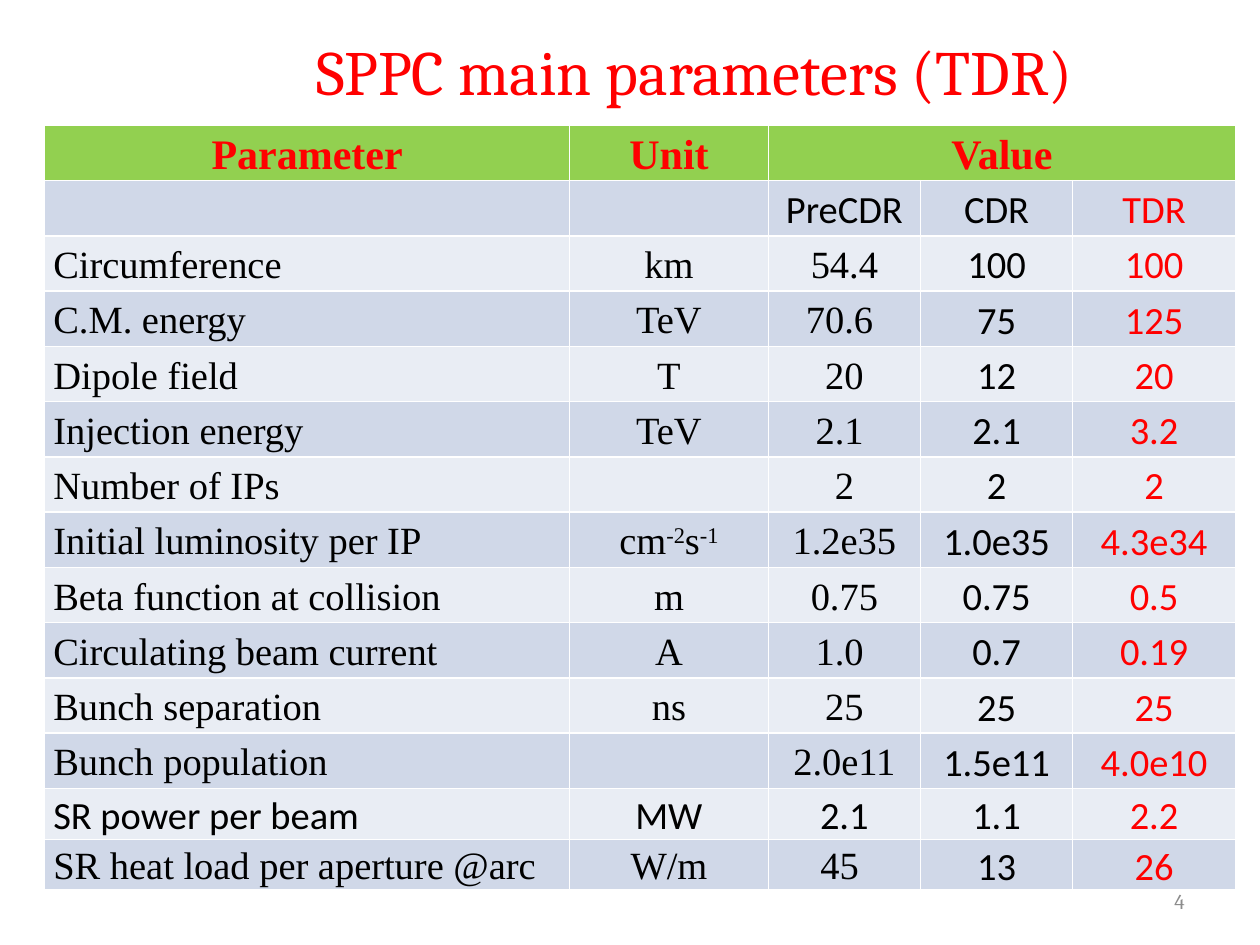
from pptx import Presentation
from pptx.dml.color import RGBColor
from pptx.enum.text import MSO_ANCHOR, MSO_AUTO_SIZE, PP_ALIGN
from pptx.util import Pt

LEFT, CENTER, RIGHT = PP_ALIGN.LEFT, PP_ALIGN.CENTER, PP_ALIGN.RIGHT
TOP, MIDDLE = MSO_ANCHOR.TOP, MSO_ANCHOR.MIDDLE
GROW = MSO_AUTO_SIZE.SHAPE_TO_FIT_TEXT

RED = RGBColor(0xFF, 0x00, 0x00)
BLACK = RGBColor(0x00, 0x00, 0x00)
GRAY = RGBColor(0x8C, 0x8C, 0x8C)
GREEN = RGBColor(0x92, 0xD0, 0x50)
BAND_DARK = RGBColor(0xD0, 0xD8, 0xE8)
BAND_LIGHT = RGBColor(0xE9, 0xED, 0xF4)

SERIF, SANS, HEADING = "Times New Roman", "Calibri", "Cambria"

COLUMN_WIDTHS = [300, 113.5, 87, 87, 93]
ROW_HEIGHT, LAST_ROW_HEIGHT = 31.6, 29
LAST_ROWS = 2
TDR_COLUMN = 4

# Superscripts stand between ^ marks
ROWS = [
    ("Parameter", "Unit", "Value", "", ""),
    ("", "", "PreCDR", "CDR", "TDR"),
    ("Circumference", "km", "54.4", "100", "100"),
    ("C.M. energy", "TeV", "70.6 ", "75", "125"),
    ("Dipole field", "T", "20", "12", "20"),
    ("Injection energy", "TeV", "2.1 ", "2.1", "3.2"),
    ("Number of IPs", "", "2", "2", "2"),
    ("Initial luminosity per IP", "cm^-2^s^-1^", "1.2e35", "1.0e35", "4.3e34"),
    ("Beta function at collision", "m", "0.75", "0.75", "0.5"),
    ("Circulating beam current", "A", "1.0 ", "0.7", "0.19"),
    ("Bunch separation", "ns", "25", "25", "25"),
    ("Bunch population", "", "2.0e11", "1.5e11", "4.0e10"),
    ("SR power per beam", "MW", "2.1", "1.1", "2.2"),
    ("SR heat load per aperture @arc", "W/m", "45 ", "13", "26"),
]
SANS_ROWS = ("PreCDR", "SR power per beam")


def style_font(font, name, size, color, bold=False):
    font.name, font.size, font.bold = name, Pt(size), bold
    font.color.rgb = color


def fill_box(box, text, size, color, align, anchor):
    frame = box.text_frame
    frame.text = text
    frame.word_wrap = True
    frame.vertical_anchor = anchor
    para = frame.paragraphs[0]
    para.alignment = align
    style_font(para.runs[0].font, HEADING, size, color)


def add_title(page):
    title = page.shapes.title
    title.left, title.top, title.width, title.height = Pt(105), Pt(15), Pt(584), Pt(51)
    fill_box(title, "SPPC main parameters (TDR)", 36, RED, CENTER, TOP)
    title.text_frame.auto_size = GROW


def add_page_number(page):
    box = page.shapes.add_textbox(Pt(516), Pt(500.5), Pt(168), Pt(29))
    fill_box(box, "4", 12, GRAY, RIGHT, MIDDLE)


def fill_cell(cell, text, fill, align, name, size, color, bold):
    cell.fill.solid()
    cell.fill.fore_color.rgb = fill
    cell.vertical_anchor = MIDDLE
    cell.margin_left = cell.margin_right = Pt(5)
    cell.margin_top = cell.margin_bottom = Pt(0)
    para = cell.text_frame.paragraphs[0]
    para.alignment = align
    para.line_spacing = 1.1
    for index, part in enumerate(text.split("^")):
        if part:
            span = para.add_run()
            span.text = part
            style_font(span.font, name, size, color, bold)
            if index % 2:
                span.font._element.set("baseline", "30000")


def add_parameter_table(page):
    last_start = len(ROWS) - LAST_ROWS
    heights = [ROW_HEIGHT] * last_start + [LAST_ROW_HEIGHT] * LAST_ROWS
    table = page.shapes.add_table(
        len(ROWS), len(COLUMN_WIDTHS), Pt(25.5), Pt(71.5),
        Pt(sum(COLUMN_WIDTHS)), Pt(sum(heights))).table
    for column, width in zip(table.columns, COLUMN_WIDTHS):
        column.width = Pt(width)
    for row, height in zip(table.rows, heights):
        row.height = Pt(height)

    for r, values in enumerate(ROWS):
        sans_row = any(label in values for label in SANS_ROWS)
        for c, text in enumerate(values):
            cell = table.cell(r, c)
            if r == 0:
                fill_cell(cell, text, GREEN, CENTER, SERIF, 24, RED, True)
                continue
            fill = BAND_DARK if r % 2 else BAND_LIGHT
            align = LEFT if c == 0 else CENTER
            name = SANS if sans_row or c >= 3 else SERIF
            color = RED if c == TDR_COLUMN else BLACK
            fill_cell(cell, text, fill, align, name, 22, color, False)

    # "Value" heads the three design stages
    table.cell(0, 2).merge(table.cell(0, TDR_COLUMN))


def main():
    deck = Presentation()
    deck.slide_width, deck.slide_height = Pt(720), Pt(540)
    page = deck.slides.add_slide(deck.slide_layouts[5])
    add_parameter_table(page)
    add_title(page)
    add_page_number(page)
    deck.save("out.pptx")


if __name__ == "__main__":
    main()
